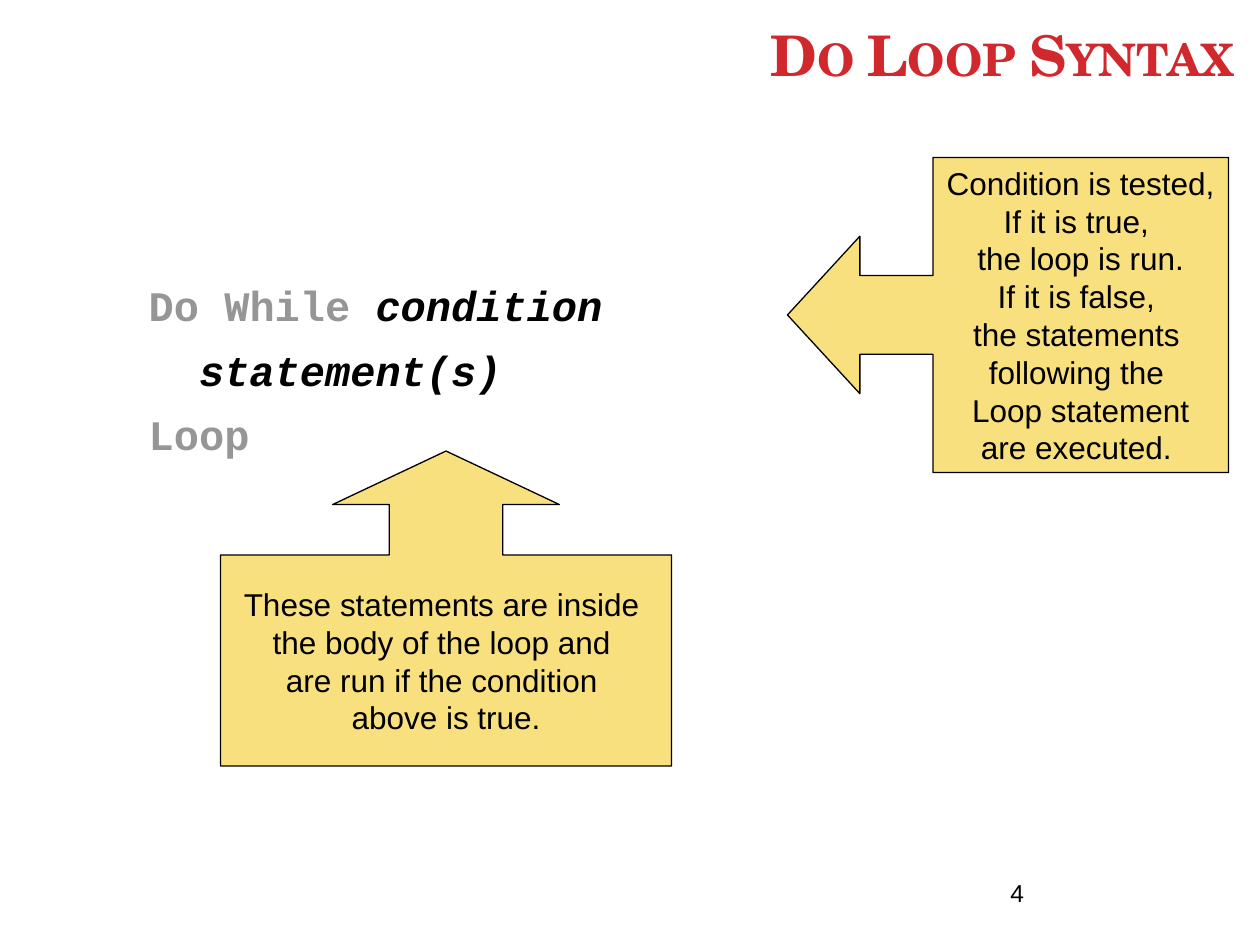
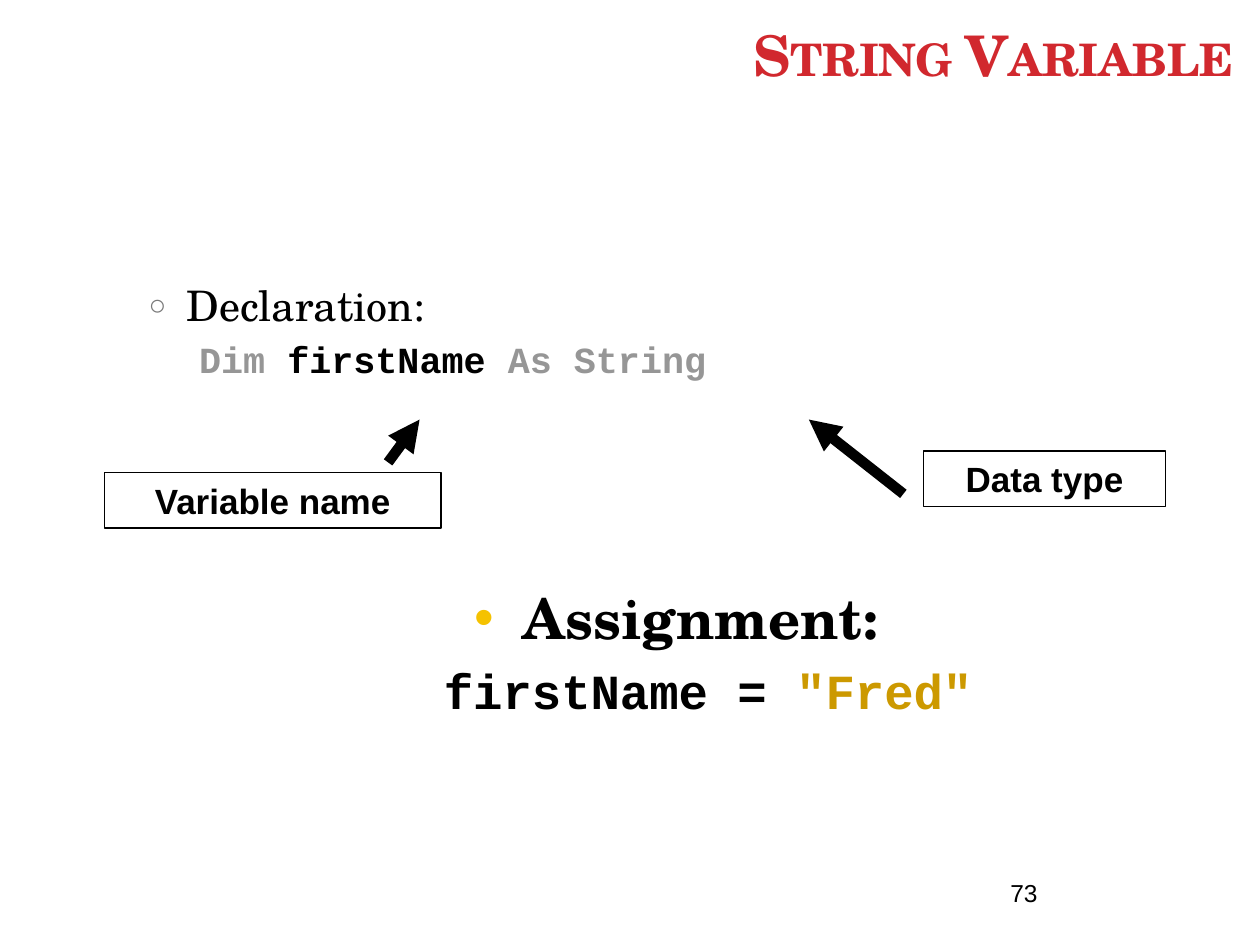
from lxml.etree import SubElement
from pptx import Presentation
from pptx.dml.color import RGBColor
from pptx.enum.shapes import MSO_CONNECTOR, MSO_SHAPE
from pptx.enum.text import MSO_ANCHOR, MSO_AUTO_SIZE, PP_ALIGN
from pptx.oxml.ns import qn
from pptx.util import Inches, Pt

COLORS = {
    "title": "D1282E",
    "text": "000000",
    "keyword": "969696",
    "literal": "CC9900",
    "accent": "F5C201",
    "bullet": "7A7A7A",
}
SERIF, SANS, MONO = "TeX Gyre Schola", "Arial", "Courier New"
TITLE_BOX = (0.17, 0.14, 9.72, 0.61)
BODY_BOX = (1.08, 2.17, 8.71, 2.08)
NUMBER_BOX = (7.92, 6.92, 2.08, 0.5)


def color(name):
    """Return the named palette colour."""
    return RGBColor.from_string(COLORS[name])


def inches(box):
    """Turn a box of plain numbers into lengths."""
    return [Inches(value) for value in box]


def add_text(para, text, font=SANS, size=18, tone="text", bold=False, italic=False, small_caps=False):
    """Add one formatted span to a paragraph."""
    span = para.add_run()
    span.text = text
    span.font.name, span.font.size = font, Pt(size)
    span.font.bold, span.font.italic = bold, italic
    span.font.color.rgb = color(tone)
    if small_caps:
        span.font._element.set("cap", "small")


def format_para(para, left=0, first=0, before=0, level=0, align=PP_ALIGN.LEFT, bullet=None, tone="bullet", percent=100):
    """Set the indents, spacing and bullet of a paragraph."""
    para.level, para.alignment = level, align
    para.space_before = Pt(before)
    props = para._p.get_or_add_pPr()
    props.set("marL", str(Inches(left)))
    props.set("indent", str(Inches(first)))
    if bullet is None:
        SubElement(props, qn("a:buNone"))
        return
    SubElement(SubElement(props, qn("a:buClr")), qn("a:srgbClr"), val=COLORS[tone])
    SubElement(props, qn("a:buSzPct"), val=str(percent * 1000))
    SubElement(props, qn("a:buFont"), typeface=SANS)
    SubElement(props, qn("a:buChar"), char=bullet)


def add_paras(frame, count):
    """Return the first paragraph of a frame followed by new ones."""
    return [frame.paragraphs[0]] + [frame.add_paragraph() for _ in range(count - 1)]


def place(holder, box, anchor):
    """Move a placeholder to a box and return its text frame."""
    holder.left, holder.top, holder.width, holder.height = inches(box)
    frame = holder.text_frame
    frame.auto_size, frame.word_wrap = MSO_AUTO_SIZE.NONE, True
    frame.vertical_anchor = anchor
    return frame


def add_text_box(page, box):
    """Add a wrapping text box and return its text frame."""
    frame = page.shapes.add_textbox(*inches(box)).text_frame
    frame.word_wrap = True
    return frame


def add_page(deck, title, number):
    """Add a page with its title and number; return it and its body frame."""
    page = deck.slides.add_slide(deck.slide_layouts[1])
    para = place(page.shapes.title, TITLE_BOX, MSO_ANCHOR.BOTTOM).paragraphs[0]
    para.alignment = PP_ALIGN.RIGHT
    add_text(para, title, font=SERIF, size=32, tone="title", bold=True, small_caps=True)
    add_text(add_text_box(page, NUMBER_BOX).paragraphs[0], str(number), size=14)
    return page, place(page.placeholders[1], BODY_BOX, MSO_ANCHOR.TOP)


def add_outlined(page, kind, box):
    """Add an unfilled shape with a thin dark outline."""
    shape = page.shapes.add_shape(kind, *inches(box))
    shape.shadow.inherit = False
    shape.fill.background()
    shape.line.color.rgb, shape.line.width = color("text"), Pt(0.75)
    shape.text_frame.vertical_anchor = MSO_ANCHOR.MIDDLE
    return shape


def add_callout(page, kind, box, adjustments, lines):
    """Add a translucent arrow callout with centred lines."""
    shape = add_outlined(page, kind, box)
    for index, value in enumerate(adjustments):
        shape.adjustments[index] = value
    shape.fill.solid()
    shape.fill.fore_color.rgb = color("accent")
    tint = shape._element.spPr.find(qn("a:solidFill")).find(qn("a:srgbClr"))
    SubElement(tint, qn("a:alpha"), val="50000")
    shape.text_frame.word_wrap = False
    for para, line in zip(add_paras(shape.text_frame, len(lines)), lines):
        para.alignment = PP_ALIGN.CENTER
        add_text(para, line)


def add_label(page, box, text):
    """Add an outlined label with bold centred text."""
    frame = add_outlined(page, MSO_SHAPE.RECTANGLE, box).text_frame
    frame.word_wrap = True
    frame.paragraphs[0].alignment = PP_ALIGN.CENTER
    add_text(frame.paragraphs[0], text, size=20, bold=True)


def add_arrow(page, start, end):
    """Add a thick arrow between two points."""
    arrow = page.shapes.add_connector(MSO_CONNECTOR.STRAIGHT, *inches(start + end))
    arrow.line.color.rgb, arrow.line.width = color("text"), Pt(6)
    SubElement(arrow.line._get_or_add_ln(), qn("a:tailEnd"), type="triangle")
    SubElement(arrow._element.spPr, qn("a:effectLst"))


def add_assignment(page, box):
    """Add the assignment heading with its code line."""
    heading, code = add_paras(add_text_box(page, box), 2)
    format_para(heading, 0.38, -0.38, 6, align=PP_ALIGN.CENTER, bullet="•", tone="accent")
    add_text(heading, "Assignment:", font=SERIF, size=32, bold=True)
    format_para(code, 0.81, -0.31, 6, level=1, align=PP_ALIGN.CENTER)
    for text, tone in (("firstName = ", "text"), ('"Fred"', "literal")):
        add_text(code, text, font=MONO, size=28, tone=tone, bold=True)


def build_loop_page(deck):
    """Build the page on loop syntax."""
    page, body = add_page(deck, "Do Loop Syntax", 4)
    opening, statement, closing = add_paras(body, 3)
    code = {"font": MONO, "size": 24, "bold": True}
    for para, left in ((opening, 0), (statement, 0.4), (closing, 0)):
        format_para(para, left, before=8)
    add_text(opening, "Do While ", tone="keyword", **code)
    add_text(opening, "condition", italic=True, **code)
    add_text(statement, "statement(s)", italic=True, **code)
    add_text(closing, "Loop", tone="keyword", **code)
    add_callout(page, MSO_SHAPE.LEFT_ARROW_CALLOUT, (6.25, 1.25, 3.5, 2.5), (0.25, 0.25, 0.23, 0.67), (
        "Condition is tested,", "If it is true, ", "the loop is run.", "If it is false, ",
        "the statements ", "following the ", "Loop statement", "are executed. "))
    add_callout(page, MSO_SHAPE.UP_ARROW_CALLOUT, (1.75, 3.58, 3.58, 2.5), (0.36, 0.36, 0.17, 0.67), (
        "These statements are inside ", "the body of the loop and ",
        "are run if the condition ", "above is true."))


def build_string_page(deck):
    """Build the page on string variables."""
    page, body = add_page(deck, "String Variable", 73)
    heading, code = add_paras(body, 2)
    format_para(heading, 0.3, -0.3, 6, bullet="○", percent=70)
    add_text(heading, "Declaration:", font=SERIF, size=24)
    format_para(code, 0.7, -0.3, 4, level=1)
    for text, tone in (("Dim", "keyword"), (" firstName ", "text"), ("As String", "keyword")):
        add_text(code, text, font=MONO, size=21, tone=tone, bold=True)
    add_label(page, (0.83, 3.75, 2.67, 0.44), "Variable name")
    add_label(page, (7.33, 3.58, 1.92, 0.44), "Data type")
    add_arrow(page, (3.08, 3.67), (3.33, 3.33))
    add_arrow(page, (7.17, 3.92), (6.42, 3.33))
    add_assignment(page, (1.08, 4.58, 8.58, 1.5))


def main():
    """Build and save the deck."""
    deck = Presentation()
    deck.slide_width, deck.slide_height = Inches(10), Inches(7.5)
    build_loop_page(deck)
    build_string_page(deck)
    deck.save("out.pptx")


if __name__ == "__main__":
    main()
